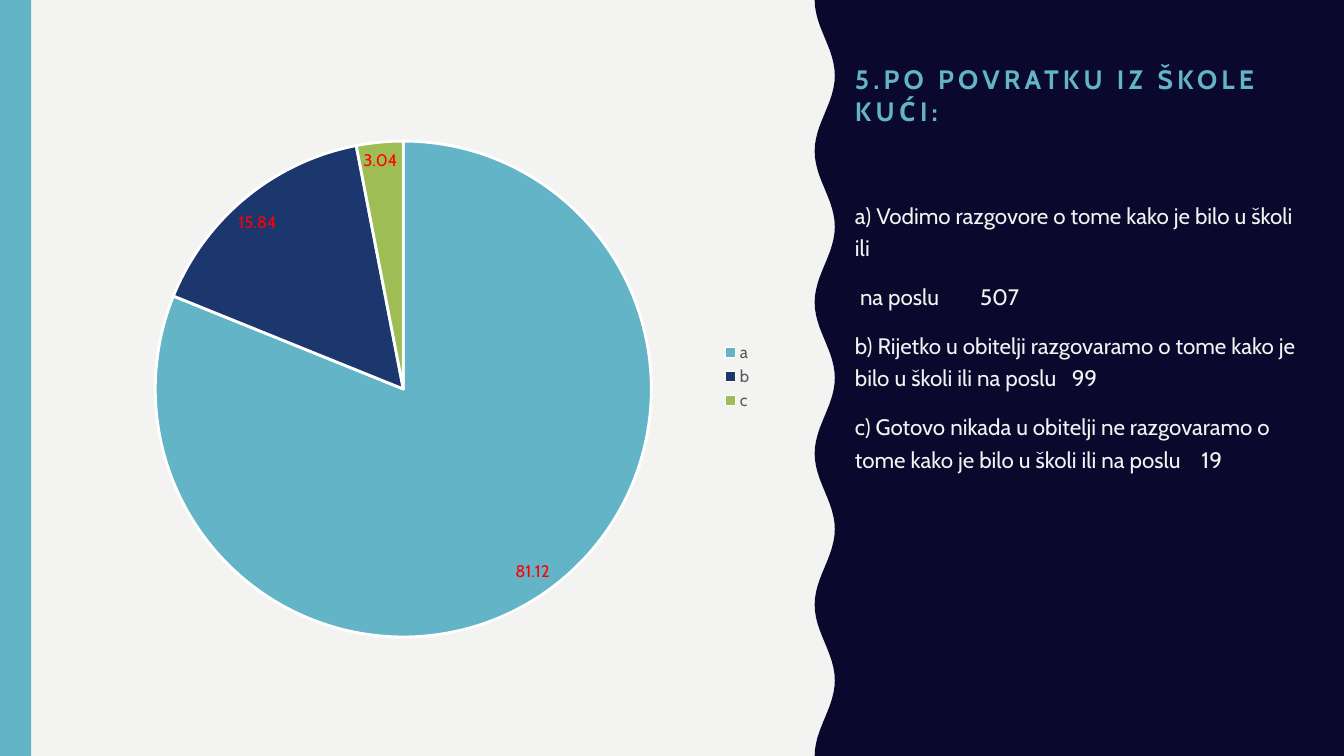
from math import cos, pi

from pptx import Presentation
from pptx.chart.data import CategoryChartData
from pptx.dml.color import RGBColor
from pptx.enum.chart import XL_CHART_TYPE as ChartType
from pptx.enum.chart import XL_LABEL_POSITION as LabelPosition
from pptx.enum.chart import XL_LEGEND_POSITION as LegendPosition
from pptx.enum.shapes import MSO_SHAPE as Shape
from pptx.enum.text import MSO_ANCHOR as Anchor
from pptx.enum.text import MSO_AUTO_SIZE as AutoSize
from pptx.enum.text import PP_ALIGN as Align
from pptx.oxml import parse_xml
from pptx.oxml.ns import nsdecls
from pptx.util import Inches, Pt

# Content
TITLE = "5.PO POVRATKU IZ ŠKOLE KUĆI:"
# Each answer: text, count, extra gap before the count in points, left indent in inches
ANSWERS = [
    ("a) Vodimo razgovore o tome kako je bilo u školi ili", None, 0, 0),
    ("na poslu", "507", 25.6, 0.05),
    ("b) Rijetko u obitelji razgovaramo o tome kako je bilo u školi ili na poslu",
     "99", 7.3, 0),
    ("c) Gotovo nikada u obitelji ne razgovaramo o tome kako je bilo u školi "
     "ili na poslu", "19", 11, 0),
]
SHARES = {"a": 81.12, "b": 15.84, "c": 3.04}

# Style
FONT = "Cabin"
COLORS = {"paper": "F3F3F2", "night": "0B082E", "sky": "62B4C6", "navy": "1B376E",
          "leaf": "9EBE55", "white": "FFFFFF", "label": "FF0000", "legend": "595959"}
SLICES = ["sky", "navy", "leaf"]

# Layout in inches
WIDTH, HEIGHT = 13.33, 7.5
BAND_WIDTH = 0.31
WAVE_CENTER, WAVE_DEPTH, WAVES, STEPS = 8.18, 0.1, 5, 120
TEXT_LEFT, TEXT_WIDTH, TEXT_MARGIN = 8.38, 4.74, 0.15
TITLE_TOP, TITLE_HEIGHT = 0.5, 0.81
BODY_TOP, BODY_HEIGHT = 1.9, 4.55
CHART_BOX = (0.84, 1.01, 6.73, 5.45)
PIE_LEFT, PIE_TOP, PIE_SIZE = 1.54, 1.4, 4.92


def color(name):
    return RGBColor.from_string(COLORS[name])


def paint(shape, name):
    shape.fill.solid()
    shape.fill.fore_color.rgb = color(name)
    shape.line.fill.background()
    shape.shadow.inherit = False


def style(font, size, name, bold=False):
    font.name, font.size, font.bold = FONT, Pt(size), bold
    font.color.rgb = color(name)


def track(span, points):
    span._r.get_or_add_rPr().set("spc", str(round(points * 100)))


def add_span(para, text):
    span = para.add_run()
    span.text = text
    return span


def place(holder, top, height, anchor):
    holder.left, holder.top = Inches(TEXT_LEFT), Inches(top)
    holder.width, holder.height = Inches(TEXT_WIDTH), Inches(height)
    frame = holder.text_frame
    frame.word_wrap, frame.auto_size = True, AutoSize.NONE
    frame.vertical_anchor = anchor
    frame.margin_right = Inches(TEXT_MARGIN)
    return frame


deck = Presentation()
deck.slide_width, deck.slide_height = Inches(WIDTH), Inches(HEIGHT)
page = deck.slides.add_slide(deck.slide_layouts[1])
page.background.fill.solid()
page.background.fill.fore_color.rgb = color("paper")

# Dark panel with a wavy left edge
wave = []
for step in range(STEPS + 1):
    y = HEIGHT * (1 - step / STEPS)
    x = WAVE_CENTER - WAVE_DEPTH * cos(2 * pi * WAVES * y / HEIGHT)
    wave.append((Inches(x), Inches(y)))
right = Inches(WIDTH)
builder = page.shapes.build_freeform(*wave[-1])
builder.add_line_segments([(right, 0), (right, Inches(HEIGHT))] + wave)
panel = builder.convert_to_shape()
paint(panel, "night")

# Left band
band = page.shapes.add_shape(Shape.RECTANGLE, 0, 0, Inches(BAND_WIDTH), Inches(HEIGHT))
paint(band, "sky")

# Panel and band go behind the placeholders
tree = page.shapes.title.element.getparent()
for position, shape in enumerate((panel, band), start=2):
    tree.insert(position, shape.element)

# Title
title = place(page.shapes.title, TITLE_TOP, TITLE_HEIGHT, Anchor.BOTTOM)
para = title.paragraphs[0]
para.alignment = Align.LEFT
style(para.font, 19, "sky", bold=True)
track(add_span(para, TITLE), 3)

# Answers, each count set apart by one widened space
body = place(page.placeholders[1], BODY_TOP, BODY_HEIGHT, Anchor.TOP)
for index, (text, count, gap, indent) in enumerate(ANSWERS):
    para = body.paragraphs[0] if index == 0 else body.add_paragraph()
    add_span(para, text)
    if count:
        track(add_span(para, " "), gap)
        add_span(para, count)
    props = para._p.get_or_add_pPr()
    props.set("marL", str(Inches(indent)))
    props.set("indent", "0")
    props.append(parse_xml(f'<a:buNone {nsdecls("a")}/>'))
    para.line_spacing, para.space_before = 1.2, Pt(12)
    style(para.font, 16, "paper")

# Pie chart
data = CategoryChartData()
data.categories = list(SHARES)
data.add_series("Series 1", list(SHARES.values()))
chart = page.shapes.add_chart(
    ChartType.PIE, *[Inches(length) for length in CHART_BOX], data).chart
chart.has_title = False
chart.font.name, chart.font.size = FONT, Pt(10)
chart.has_legend = True
chart.legend.position = LegendPosition.RIGHT
chart.legend.include_in_layout = False
style(chart.legend.font, 12, "legend")

pie = chart.plots[0]
pie.vary_by_categories = True
for index, name in enumerate(SLICES):
    piece = pie.series[0].points[index].format
    piece.fill.solid()
    piece.fill.fore_color.rgb = color(name)
    piece.line.color.rgb = color("white")
    piece.line.width = Pt(2)
pie.has_data_labels = True
labels = pie.data_labels
labels.show_value = True
labels.position = LabelPosition.BEST_FIT
style(labels.font, 12, "label")

# Fixed place for the pie inside the chart, as shares of the chart's size
left, top, width, height = CHART_BOX
pie_shares = {"x": (PIE_LEFT - left) / width, "y": (PIE_TOP - top) / height,
              "w": PIE_SIZE / width, "h": PIE_SIZE / height}
area = chart._chartSpace.chart.plotArea
for old in area.xpath("c:layout"):
    area.remove(old)
sizes = "".join(f'<c:{key} val="{share:.4f}"/>' for key, share in pie_shares.items())
area.insert(0, parse_xml(
    f'<c:layout {nsdecls("c")}><c:manualLayout><c:layoutTarget val="inner"/>'
    f'<c:xMode val="edge"/><c:yMode val="edge"/>{sizes}</c:manualLayout></c:layout>'))

deck.save("out.pptx")
